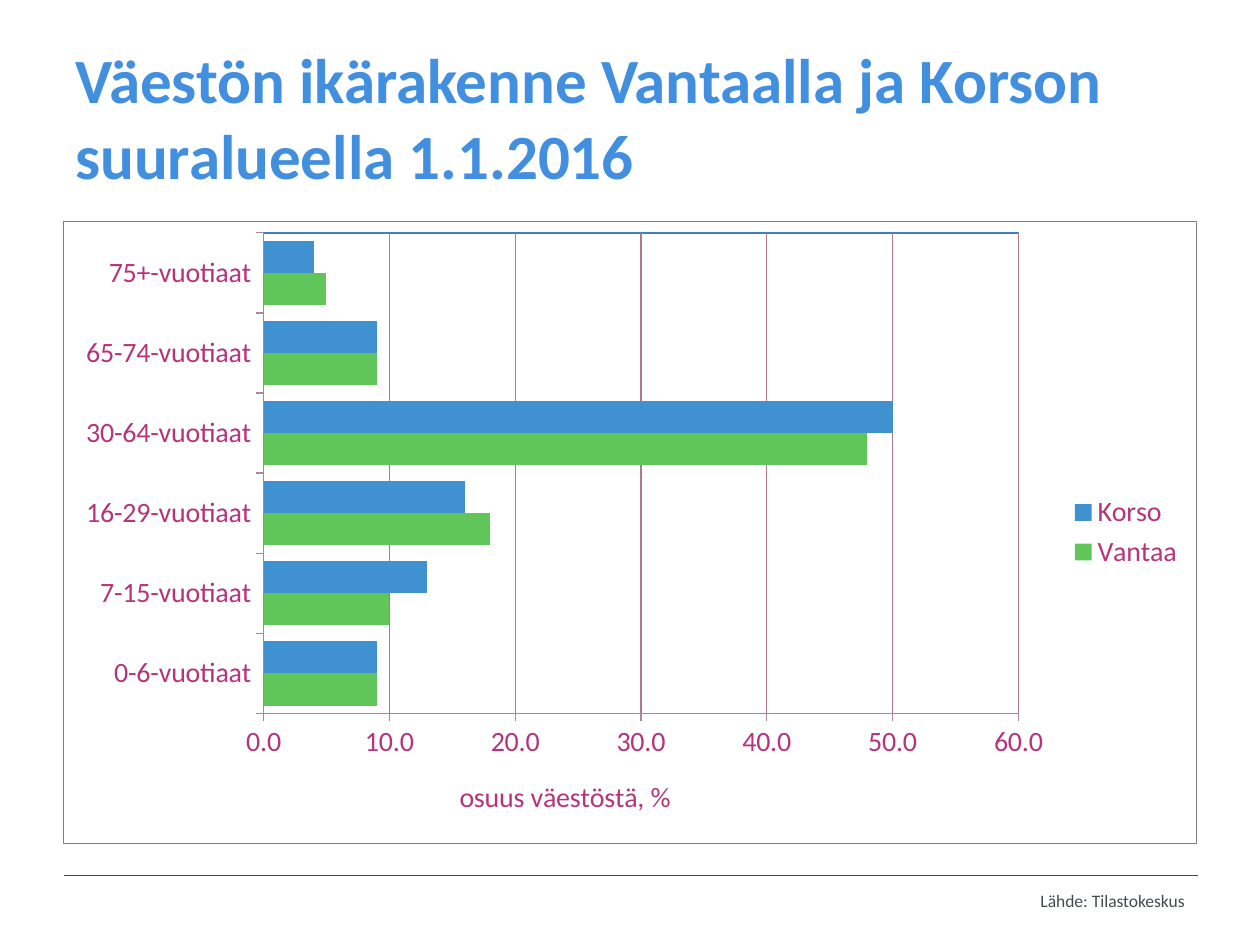
from dataclasses import dataclass

from lxml import etree
from pptx import Presentation
from pptx.chart.data import CategoryChartData
from pptx.dml.color import RGBColor
from pptx.enum.chart import XL_CHART_TYPE, XL_LEGEND_POSITION, XL_TICK_MARK
from pptx.enum.shapes import MSO_CONNECTOR
from pptx.enum.text import MSO_ANCHOR, PP_ALIGN
from pptx.oxml import parse_xml
from pptx.oxml.ns import nsdecls, qn
from pptx.util import Inches, Pt

BAR = XL_CHART_TYPE.BAR_CLUSTERED
LEGEND_RIGHT = XL_LEGEND_POSITION.RIGHT
TICK_OUT = XL_TICK_MARK.OUTSIDE
STRAIGHT = MSO_CONNECTOR.STRAIGHT
MIDDLE = MSO_ANCHOR.MIDDLE
LEFT, RIGHT = PP_ALIGN.LEFT, PP_ALIGN.RIGHT


@dataclass(frozen=True)
class Theme:
    font: str = "Calibri"
    title: str = "418FDE"
    footer: str = "474A4C"
    chart_text: str = "B6347A"
    border: str = "808080"
    axis: str = "A08C96"
    grid: str = "B0788F"
    plot_edge: str = "3F7FBF"
    title_size: int = 36
    chart_size: int = 16
    footer_size: int = 10


THEME = Theme()
AGES = ["0-6-vuotiaat", "7-15-vuotiaat", "16-29-vuotiaat",
        "30-64-vuotiaat", "65-74-vuotiaat", "75+-vuotiaat"]
SERIES = [
    ("Vantaa", "60C659", (9, 10, 18, 48, 9, 5)),
    ("Korso", "3F92CF", (9, 13, 16, 50, 9, 4)),
]


def rgb(value):
    return RGBColor.from_string(value)


def style_font(font, size, color, bold=False):
    font.name, font.size, font.bold = THEME.font, Pt(size), bold
    font.color.rgb = rgb(color)


def style_line(line, color, width=0.75):
    line.color.rgb = rgb(color)
    line.width = Pt(width)


def add_text(slide, box, text, size, color, align=LEFT, bold=False):
    tf = slide.shapes.add_textbox(*box).text_frame
    tf.word_wrap = True
    tf.vertical_anchor = MIDDLE
    tf.text = text
    p = tf.paragraphs[0]
    p.alignment = align
    style_font(p.runs[0].font, size, color, bold)


def layout_xml(x, y, w=None, h=None):
    """Manual chart layout, in percent of the chart frame."""
    target = '<c:layoutTarget val="inner"/>' if w else ""
    size = f'<c:w val="{w / 100}"/><c:h val="{h / 100}"/>' if w else ""
    return parse_xml(
        f'<c:layout {nsdecls("c")}><c:manualLayout>{target}'
        f'<c:xMode val="edge"/><c:yMode val="edge"/>'
        f'<c:x val="{x / 100}"/><c:y val="{y / 100}"/>{size}'
        f'</c:manualLayout></c:layout>')


def outline_xml(color):
    return parse_xml(
        f'<c:spPr {nsdecls("c", "a")}><a:noFill/><a:ln w="{Pt(0.75)}"><a:solidFill>'
        f'<a:srgbClr val="{color}"/></a:solidFill></a:ln></c:spPr>')


def set_layout(parent, layout, after=None):
    for old in parent.findall(qn("c:layout")):
        parent.remove(old)
    index = 0 if after is None else parent.index(parent.find(qn(after))) + 1
    parent.insert(index, layout)


def add_title(slide, box):
    add_text(slide, box, "Väestön ikärakenne Vantaalla ja Korson suuralueella 1.1.2016",
             THEME.title_size, THEME.title, bold=True)


def add_age_chart(slide, box):
    data = CategoryChartData(number_format="0.0")
    data.categories = AGES
    for name, _, shares in SERIES:
        data.add_series(name, shares)
    chart = slide.shapes.add_chart(BAR, *box, data).chart
    chart.has_title = False
    style_font(chart.font, THEME.chart_size, THEME.chart_text)

    # Bars
    plot = chart.plots[0]
    plot.gap_width, plot.overlap = 48, 0
    plot.vary_by_categories = False
    for series, (_, color, _) in zip(plot.series, SERIES):
        series.format.fill.solid()
        series.format.fill.fore_color.rgb = rgb(color)
        series.invert_if_negative = False

    # Axes
    for axis in (chart.category_axis, chart.value_axis):
        axis.major_tick_mark = TICK_OUT
        style_line(axis.format.line, THEME.axis)
    values = chart.value_axis
    values.minimum_scale, values.maximum_scale, values.major_unit = 0, 60, 10
    values.tick_labels.number_format = "0.0"
    values.tick_labels.number_format_is_linked = False
    values.has_major_gridlines = True
    style_line(values.major_gridlines.format.line, THEME.grid)
    title_tf = values.axis_title.text_frame
    title_tf.text = "osuus väestöstä, %"
    style_font(title_tf.paragraphs[0].runs[0].font,
               THEME.chart_size, THEME.chart_text)

    # Legend
    chart.has_legend = True
    chart.legend.position = LEGEND_RIGHT
    chart.legend.include_in_layout = False

    # Plot and axis title placement, plot outline and chart border
    chart_el = chart.element.find(qn("c:chart"))
    area = chart_el.find(qn("c:plotArea"))
    set_layout(area, layout_xml(17.65, 1.9, 66.65, 77.2))
    area.append(outline_xml(THEME.plot_edge))
    axis_title = area.find(qn("c:valAx")).find(qn("c:title"))
    set_layout(axis_title, layout_xml(34.5, 88.6), after="c:tx")
    chart_el.addnext(outline_xml(THEME.border))


def add_footer(slide, box):
    left, top, width, height = box
    line_left = left + Inches(0.01)
    line = slide.shapes.add_connector(STRAIGHT, line_left, top, line_left + width, top)
    style_line(line.line, THEME.footer, 0.5)
    etree.SubElement(line.element.spPr, qn("a:effectLst"))
    source_w = Inches(2.33)
    add_text(slide, (left + width - source_w, top, source_w, height),
             "Lähde: Tilastokeskus", THEME.footer_size, THEME.footer, RIGHT)


def main():
    prs = Presentation()
    prs.slide_width, prs.slide_height = Inches(10), Inches(7.5)
    slide = prs.slides.add_slide(prs.slide_layouts[6])
    left, width = Inches(0.5), Inches(9)
    add_title(slide, (left, Inches(0.3), width, Inches(1.25)))
    add_age_chart(slide, (left, Inches(1.75), width, Inches(4.95)))
    add_footer(slide, (left, Inches(6.95), width, Inches(0.4)))
    prs.save("out.pptx")


if __name__ == "__main__":
    main()
